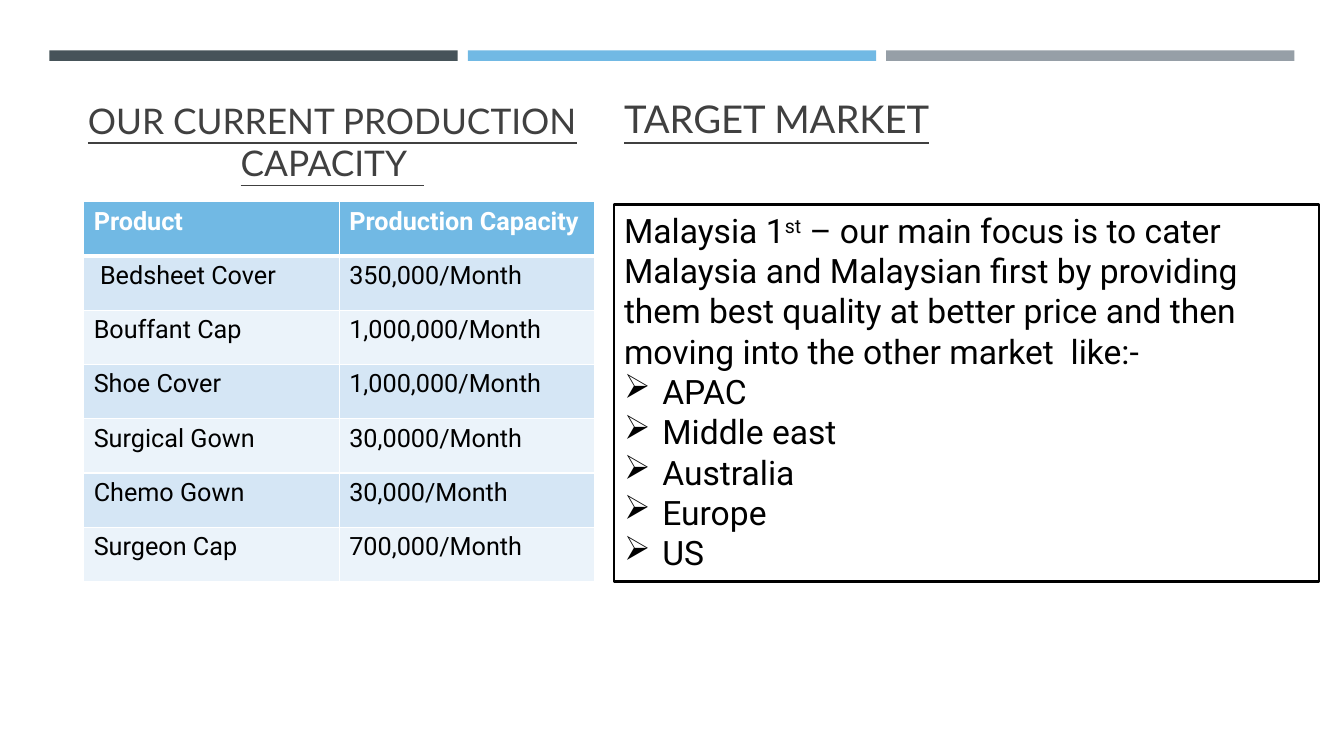
from dataclasses import dataclass

import lxml.etree
import pptx
import pptx.dml.color
import pptx.enum.shapes
import pptx.enum.text
import pptx.oxml.ns
import pptx.util

ALIGN = pptx.enum.text.PP_ALIGN
ANCHOR = pptx.enum.text.MSO_ANCHOR


@dataclass(frozen=True)
class Theme:
    heading_font: str = "Lato"
    body_font: str = "Roboto"
    dark: str = "465359"
    blue: str = "71B9E4"
    grey: str = "969FA7"
    heading: str = "404040"
    text: str = "000000"
    white: str = "FFFFFF"
    bands: tuple = ("D5E6F5", "EBF3FA")
    title_size: float = 25.2
    subtitle_size: float = 27.3
    body_size: float = 24
    table_size: float = 18


def color(value):
    return pptx.dml.color.RGBColor.from_string(value)


def add_xml(parent, tag, **attributes):
    return lxml.etree.SubElement(parent, pptx.oxml.ns.qn(tag), attributes)


class SlideBuilder:
    """Places elements by (left, top, width, height) in percent of the slide."""

    def __init__(self, presentation, theme):
        self.theme = theme
        self.width = presentation.slide_width
        self.height = presentation.slide_height
        self.slide = presentation.slides.add_slide(presentation.slide_layouts[6])

    def box(self, left, top, width, height):
        return (int(self.width * left / 100), int(self.height * top / 100),
                int(self.width * width / 100), int(self.height * height / 100))

    def style(self, paragraph, font, size, font_color, bold=False, underline=None):
        paragraph.font.name = font
        paragraph.font.size = pptx.util.Pt(size)
        paragraph.font.color.rgb = color(font_color)
        paragraph.font.bold = bold
        paragraph.font.underline = underline

    def rectangle(self, area, fill, line=None):
        shape = self.slide.shapes.add_shape(
            pptx.enum.shapes.MSO_SHAPE.RECTANGLE, *self.box(*area))
        shape.shadow.inherit = False
        shape.fill.solid()
        shape.fill.fore_color.rgb = color(fill)
        if line:
            shape.line.color.rgb = color(line)
            shape.line.width = pptx.util.Pt(1.75)
        else:
            shape.line.fill.background()
        return shape

    def heading(self, area, text, size, alignment):
        frame = self.slide.shapes.add_textbox(*self.box(*area)).text_frame
        frame.word_wrap = True
        frame.vertical_anchor = ANCHOR.BOTTOM
        paragraph = frame.paragraphs[0]
        paragraph.text = text
        paragraph.alignment = alignment
        self.style(paragraph, self.theme.heading_font, size,
                   self.theme.heading, underline=True)

    def market_panel(self, area, intro, markets):
        """intro is a list of (text, is_superscript) pairs."""
        frame = self.rectangle(area, self.theme.white, self.theme.text).text_frame
        frame.word_wrap = True
        frame.vertical_anchor = ANCHOR.TOP
        for text, superscript in intro:
            run = frame.paragraphs[0].add_run()
            run.text = text
            if superscript:
                run.font._element.set("baseline", "30000")
        for market in markets:
            paragraph = frame.add_paragraph()
            paragraph.text = market
            indent = pptx.util.Inches(0.38)
            properties = paragraph._p.get_or_add_pPr()
            properties.set("marL", str(indent))
            properties.set("indent", str(-indent))
            add_xml(properties, "a:buChar", char="➢")
        for paragraph in frame.paragraphs:
            paragraph.alignment = ALIGN.LEFT
            self.style(paragraph, self.theme.body_font, self.theme.body_size,
                       self.theme.text)

    def borders(self, cell, row):
        """White cell lines, thick between the header and the body."""
        properties = cell._tc.get_or_add_tcPr()
        widths = {"L": 1, "R": 1, "T": 3 if row == 1 else 1, "B": 3 if row == 0 else 1}
        for side, width in widths.items():
            line = add_xml(properties, f"a:ln{side}", w=str(pptx.util.Pt(width)))
            add_xml(add_xml(line, "a:solidFill"), "a:srgbClr", val=self.theme.white)

    def table(self, area, rows):
        table = self.slide.shapes.add_table(
            len(rows), len(rows[0]), *self.box(*area)).table
        for row, values in enumerate(rows):
            header = row == 0
            for column, value in enumerate(values):
                cell = table.cell(row, column)
                self.borders(cell, row)
                cell.fill.solid()
                cell.fill.fore_color.rgb = color(
                    self.theme.blue if header else self.theme.bands[(row - 1) % 2])
                cell.text = value
                self.style(cell.text_frame.paragraphs[0], self.theme.body_font,
                           self.theme.table_size,
                           self.theme.white if header else self.theme.text, header)


def main():
    presentation = pptx.Presentation()
    presentation.slide_width = pptx.util.Inches(13.33)
    presentation.slide_height = pptx.util.Inches(7.5)
    theme = Theme()
    builder = SlideBuilder(presentation, theme)

    for index, fill in enumerate((theme.dark, theme.blue, theme.grey)):
        builder.rectangle((3.68 + 31.13 * index, 6.67, 30.38, 1.37), fill)

    builder.heading((1.8, 11.33, 45.84, 13.6),
                    "OUR CURRENT PRODUCTION CAPACITY  ",
                    theme.title_size, ALIGN.CENTER)
    builder.market_panel(
        (45.69, 27.07, 52.44, 49.87),
        [("Malaysia 1", False), ("st", True),
         (" – our main focus is to cater Malaysia and Malaysian first by "
          "providing them best quality at better price and then moving into "
          "the other market  like:-", False)],
        ["APAC", "Middle east", "Australia", "Europe", "US"])
    builder.table((6.23, 26.67, 38.03, 50.27), [
        ("Product", "Production Capacity"),
        (" Bedsheet Cover", "350,000/Month"),
        ("Bouffant Cap", "1,000,000/Month"),
        ("Shoe Cover", "1,000,000/Month"),
        ("Surgical Gown", "30,0000/Month"),
        ("Chemo Gown", "30,000/Month"),
        ("Surgeon Cap", "700,000/Month"),
    ])
    builder.heading((45.69, 11.33, 51.69, 8), "TARGET MARKET",
                    theme.subtitle_size, ALIGN.LEFT)
    presentation.save("out.pptx")


if __name__ == "__main__":
    main()
